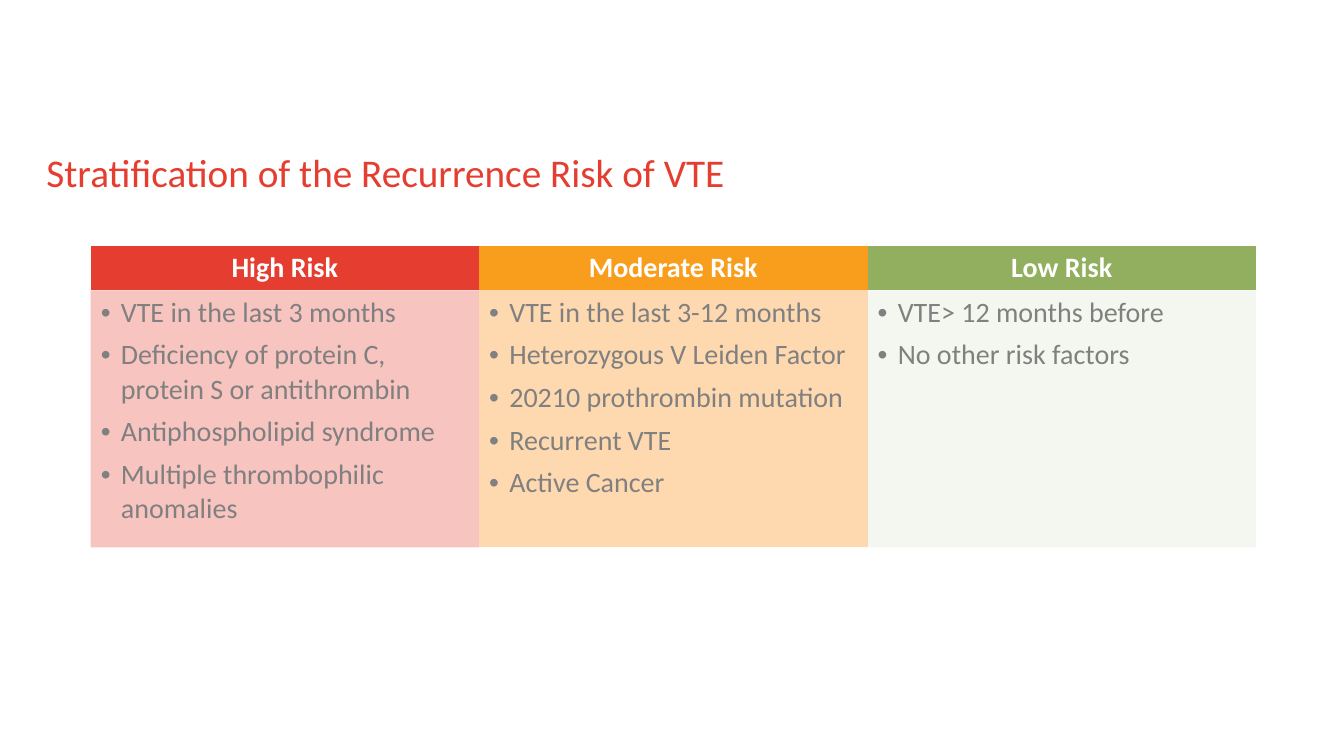
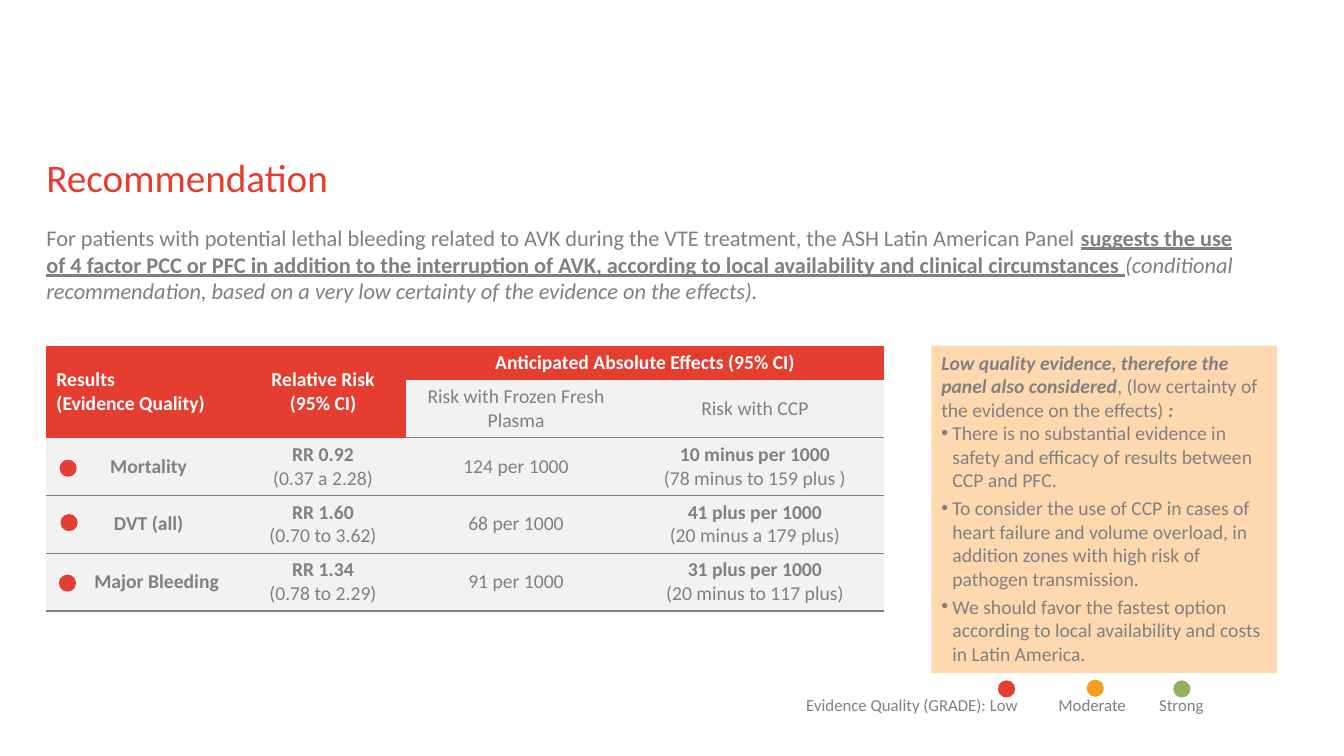
from pptx import Presentation
from pptx.dml.color import RGBColor
from pptx.enum.shapes import MSO_SHAPE
from pptx.enum.text import MSO_ANCHOR, MSO_AUTO_SIZE, PP_ALIGN
from pptx.oxml.ns import qn
from pptx.util import Inches, Pt
from lxml import etree

OVAL, RECTANGLE = MSO_SHAPE.OVAL, MSO_SHAPE.RECTANGLE
TOP, MIDDLE = MSO_ANCHOR.TOP, MSO_ANCHOR.MIDDLE
LEFT, CENTER = PP_ALIGN.LEFT, PP_ALIGN.CENTER
FONT = "Calibri"
NO_STYLE = "{2D5ABB26-0587-4C30-8999-92F81FD0307C}"
COLORS = {
    "red": "E53E31", "dot": "E43E32", "orange": "F99D1C", "green": "91AF5F",
    "pink": "E63E30", "peach": "FED9B0", "mint": "C9D7AF",
    "pale": "F2F2F2", "gray": "808080", "white": "FFFFFF",
}
COLORS = {name: RGBColor.from_string(value) for name, value in COLORS.items()}

deck = Presentation()
deck.slide_width, deck.slide_height = Inches(13.33), Inches(7.5)
COLUMN, ROW = deck.slide_width / 100, deck.slide_height / 100
MARGIN = 3.45
DOT = (1.28, 2.27)


def place(left, top, width, height):
    return int(left * COLUMN), int(top * ROW), int(width * COLUMN), int(height * ROW)


def write(frame, lines, size, color="gray", align=LEFT, indent=0, after=0):
    for number, line in enumerate(lines):
        para = frame.paragraphs[0] if number == 0 else frame.add_paragraph()
        spans = [(line, "")] if isinstance(line, str) else line
        bulleted = "•" in spans[0][1]
        para.alignment = align
        para.space_before = Pt(0)
        para.space_after = Pt(after if bulleted else 0)
        hang = Inches(indent) if bulleted else 0
        properties = para._p.get_or_add_pPr()
        properties.set("marL", str(hang))
        properties.set("indent", str(-hang))
        if bulleted:
            etree.SubElement(properties, qn("a:buFont"), typeface="Arial")
            etree.SubElement(properties, qn("a:buChar"), char="•")
        else:
            etree.SubElement(properties, qn("a:buNone"))
        para.font.name = FONT
        para.font.size = Pt(size)
        para.font.color.rgb = COLORS[color]
        for text, style in spans:
            span = para.add_run()
            span.text = text
            font = para.font if len(spans) == 1 else span.font
            font.bold, font.italic, font.underline = (mark in style for mark in "biu")


pages = []
for layout, title, inset in (
    (5, "Stratification of the Recurrence Risk of VTE", 0),
    (1, "Recommendation", 0.05),
):
    page = deck.slides.add_slide(deck.slide_layouts[layout])
    box = page.shapes.title
    box.left, box.top, box.width, box.height = place(MARGIN, 19.6, 90, 10.4)
    frame = box.text_frame
    frame.auto_size, frame.vertical_anchor = MSO_AUTO_SIZE.NONE, TOP
    frame.margin_left = frame.margin_right = 0
    frame.margin_top = frame.margin_bottom = Inches(inset)
    write(frame, [title], 28, "red")
    pages.append(page)
risk_page, advice_page = pages

risks = [
    ("High Risk", "red", "pink", 30, [
        "VTE in the last 3 months",
        "Deficiency of protein C, protein S or antithrombin",
        "Antiphospholipid syndrome",
        "Multiple thrombophilic anomalies",
    ]),
    ("Moderate Risk", "orange", "peach", 100, [
        "VTE in the last 3-12 months",
        "Heterozygous V Leiden Factor",
        "20210 prothrombin mutation",
        "Recurrent VTE",
        "Active Cancer",
    ]),
    ("Low Risk", "green", "mint", 20, [
        "VTE> 12 months before",
        "No other risk factors",
    ]),
]
risk_table = risk_page.shapes.add_table(2, 3, *place(6.75, 32.53, 86.7, 39.87)).table
effect_table = advice_page.shapes.add_table(5, 4, *place(MARGIN, 45.73, 62.33, 34.8)).table
for table, widths, heights in (
    (risk_table, [28.9] * 3, [5.87, 34]),
    (effect_table, [14.4, 12.38, 16.35, 19.2], [4.4] + [7.6] * 4),
):
    table._tbl.tblPr.find(qn("a:tableStyleId")).text = NO_STYLE
    table.first_row = table.horz_banding = False
    for column, width in zip(table.columns, widths):
        column.width = int(width * COLUMN)
    for row, height in zip(table.rows, heights):
        row.height = int(height * ROW)

for index, (heading, head_color, body_color, opacity, factors) in enumerate(risks):
    head, body = risk_table.cell(0, index), risk_table.cell(1, index)
    for cell, color in ((head, head_color), (body, body_color)):
        cell.fill.solid()
        cell.fill.fore_color.rgb = COLORS[color]
    if opacity < 100:
        tint = next(body._tc.tcPr.iter(qn("a:srgbClr")))
        etree.SubElement(tint, qn("a:alpha"), val=str(opacity * 1000))
    head.vertical_anchor = MIDDLE
    write(head.text_frame, [[(heading, "b")]], 20, "white", CENTER)
    write(body.text_frame, [[(factor, "•")] for factor in factors], 20, indent=0.2, after=6)

box = advice_page.placeholders[1]
box.left, box.top, box.width, box.height = place(MARGIN, 29.6, 90, 16.13)
frame = box.text_frame
frame.auto_size, frame.vertical_anchor = MSO_AUTO_SIZE.NONE, TOP
frame.margin_left = frame.margin_right = frame.margin_top = frame.margin_bottom = 0
write(frame, [[
    ("For patients with potential lethal bleeding related to AVK during the VTE treatment, "
     "the ASH Latin American Panel ", ""),
    ("suggests the use of 4 factor PCC or PFC in addition to the interruption of AVK, "
     "according to local availability and clinical circumstances ", "bu"),
    ("(conditional recommendation, based on a very low certainty of the evidence "
     "on the effects).", "i"),
]], 16)

effects = [
    [["Results", "(Evidence Quality)"], ["Relative Risk", "(95% CI)"],
     ["Anticipated Absolute Effects (95% CI)"], []],
    [[], [], ["Risk with Frozen Fresh Plasma"], ["Risk with CCP"]],
    [["Mortality"], ["RR 0.92", "(0.37 a 2.28)"], ["124 per 1000"],
     ["10 minus per 1000", "(78 minus to 159 plus )"]],
    [["DVT (all)"], ["RR 1.60", "(0.70 to 3.62)"], ["68 per 1000"],
     ["41 plus per 1000", "(20 minus a 179 plus)"]],
    [["Major Bleeding"], ["RR 1.34", "(0.78 to 2.29)"], ["91 per 1000"],
     ["31 plus per 1000", "(20 minus to 117 plus)"]],
]
for first, last in (((0, 0), (1, 0)), ((0, 1), (1, 1)), ((0, 2), (0, 3))):
    effect_table.cell(*first).merge(effect_table.cell(*last))
for row, entries in enumerate(effects):
    for column, lines in enumerate(entries):
        cell = effect_table.cell(row, column)
        heading = row == 0 or (row == 1 and column < 2)
        cell.fill.solid()
        cell.fill.fore_color.rgb = COLORS["red" if heading else "pale"]
        cell.vertical_anchor = MIDDLE
        if not heading:
            border = etree.Element(qn("a:lnB"), w=str(Pt(1)))
            paint = etree.SubElement(border, qn("a:solidFill"))
            etree.SubElement(paint, qn("a:srgbClr"), val=str(COLORS["gray"]))
            cell._tc.tcPr.insert(0, border)
        if row > 1 and column == 0:
            cell.margin_left = Inches(0.37 if row == 4 else 0.21)
        styled = []
        for number, line in enumerate(lines):
            strong = heading or (row > 1 and column != 2 and number == 0)
            styled.append([(line, "b" if strong else "")])
        if styled:
            write(cell.text_frame, styled, 14, "white" if heading else "gray",
                  LEFT if row == column == 0 else CENTER)

panel = advice_page.shapes.add_shape(RECTANGLE, *place(69.3, 45.73, 25.72, 43.33))
panel.shadow.inherit = False
panel.fill.solid()
panel.fill.fore_color.rgb = COLORS["peach"]
panel.line.fill.background()
panel.text_frame.word_wrap = True
panel.text_frame.vertical_anchor = TOP
write(panel.text_frame, [
    [("Low quality evidence, therefore the panel also considered", "bi"),
     (", (low certainty of the evidence on the effects)", ""), (" :", "bi")],
    [("There is no substantial evidence in safety and efficacy of results between "
      "CCP and PFC.", "•")],
    [("To consider the use of CCP in cases of heart failure and volume overload, "
      "in addition zones with high risk of pathogen transmission.", "•")],
    [("We should favor the fastest option according to local availability and costs "
      "in Latin America.", "•")],
], 14, indent=0.11, after=3)

legend = advice_page.shapes.add_group_shape()
box = legend.shapes.add_textbox(*place(59.25, 91.2, 35.7, 4))
box.text_frame.word_wrap = True
write(box.text_frame, ["Evidence Quality (GRADE): Low\tModerate\tStrong"], 12)
tabs = etree.Element(qn("a:tabLst"))
for stop in (2.51, 3.52):
    etree.SubElement(tabs, qn("a:tab"), pos=str(Inches(stop)), algn="l")
box.text_frame.paragraphs[0]._p.pPr.find(qn("a:buNone")).addnext(tabs)

dots = [
    (legend, 74.25, 90, "dot"), (legend, 80.85, 89.9, "orange"), (legend, 87.3, 90, "green"),
    (advice_page, 4.43, 60.8, "dot"), (advice_page, 4.5, 68, "dot"), (advice_page, 4.38, 76, "dot"),
]
for parent, left, top, color in dots:
    dot = parent.shapes.add_shape(OVAL, *place(left, top, *DOT))
    dot.shadow.inherit = False
    dot.fill.solid()
    dot.fill.fore_color.rgb = COLORS[color]
    dot.line.fill.background()

deck.save("out.pptx")
